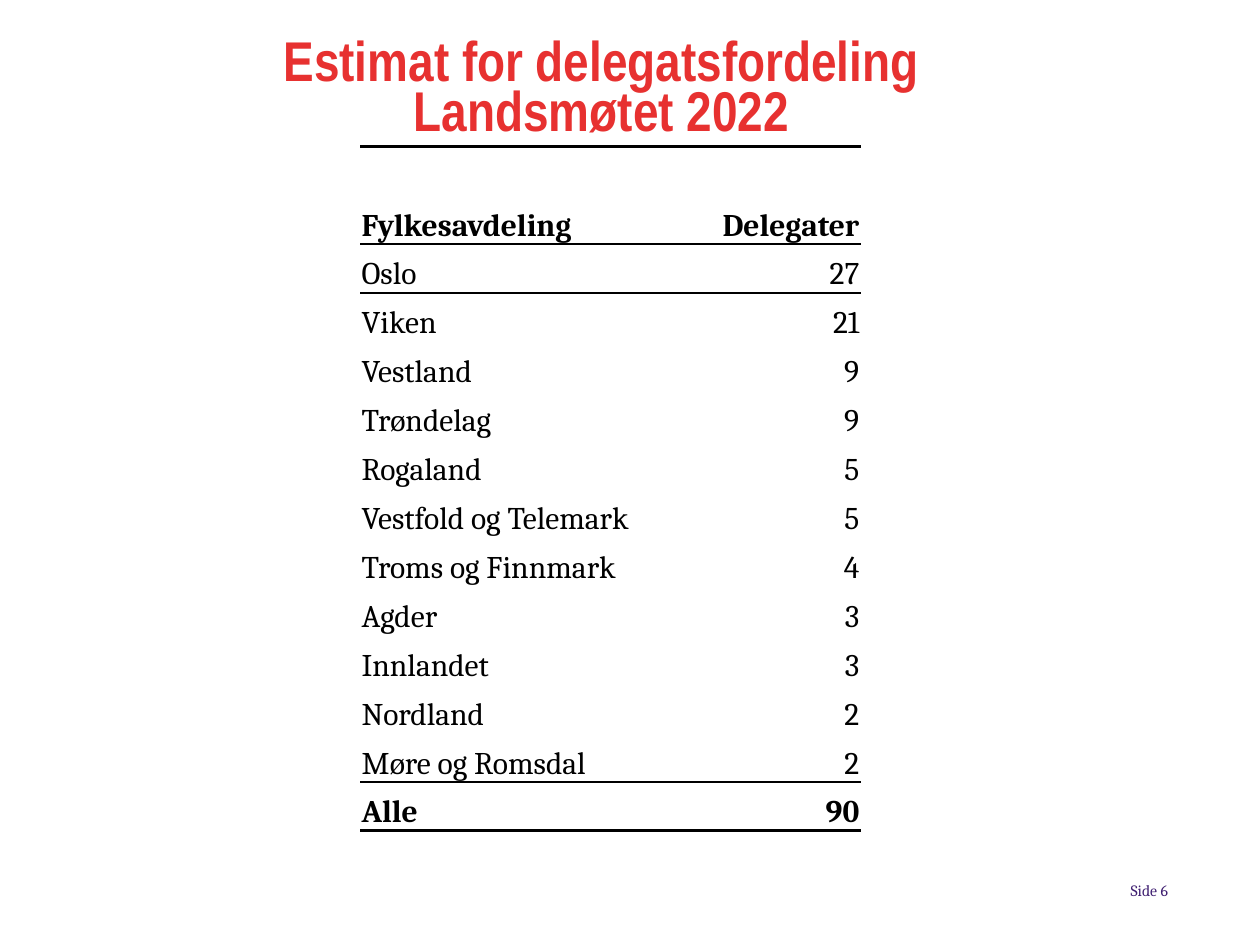
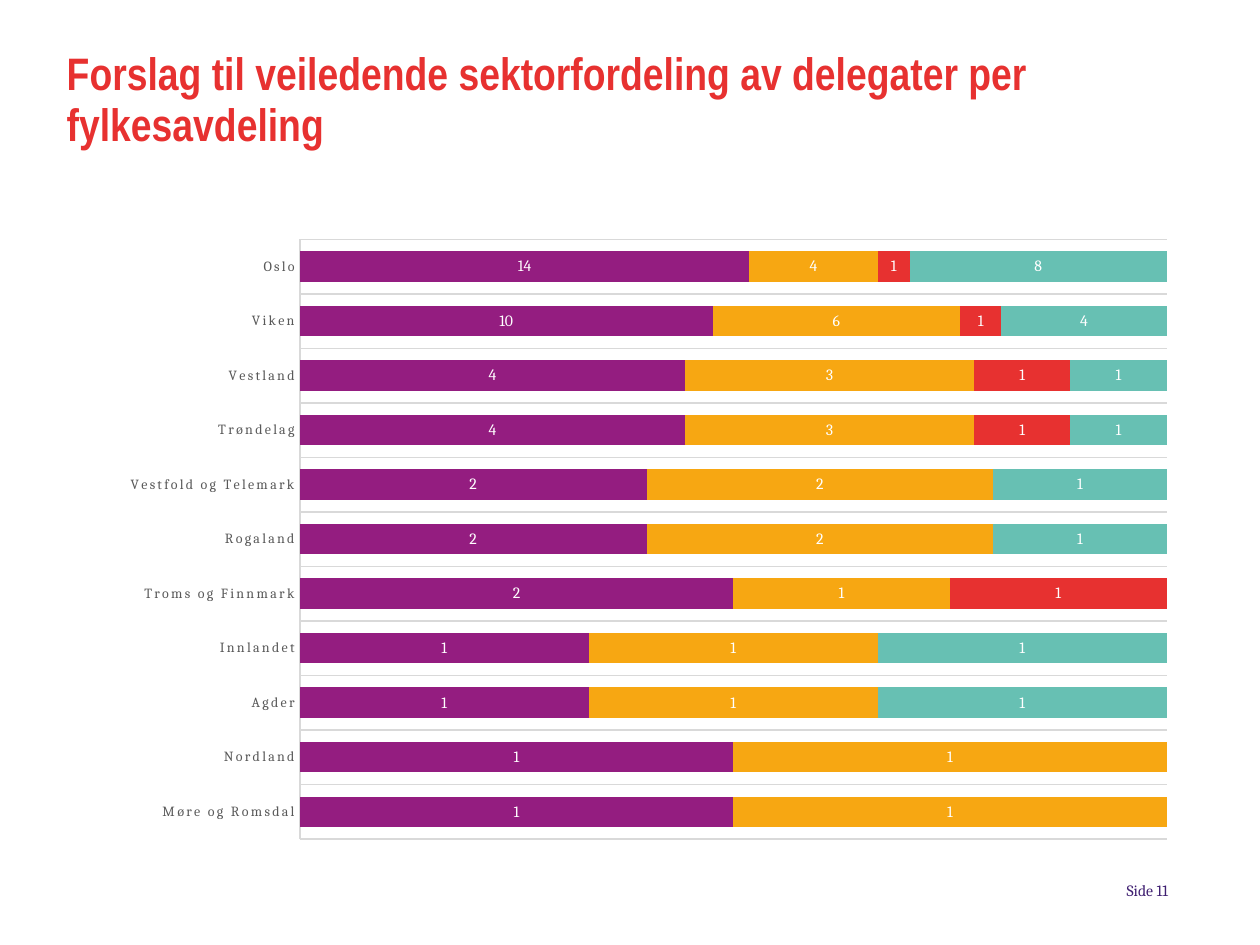
from dataclasses import dataclass
from lxml import etree
from pptx import Presentation, util as u
from pptx.chart import data as cd
from pptx.dml import color as col
from pptx.enum import chart as ch, text as tx
from pptx.oxml import ns, parse_xml

HEAD = ("Fylkesavdeling", "Delegater")
SEATS = [
    ("Oslo", 27), ("Viken", 21), ("Vestland", 9), ("Trøndelag", 9),
    ("Rogaland", 5), ("Vestfold og Telemark", 5), ("Troms og Finnmark", 4),
    ("Agder", 3), ("Innlandet", 3), ("Nordland", 2), ("Møre og Romsdal", 2),
]
TOTAL = ("Alle", 90)

SPLIT = [
    ("Møre og Romsdal", 1, 1, None, None),
    ("Nordland", 1, 1, None, None),
    ("Agder", 1, 1, None, 1),
    ("Innlandet", 1, 1, None, 1),
    ("Troms og Finnmark", 2, 1, 1, None),
    ("Rogaland", 2, 2, None, 1),
    ("Vestfold og Telemark", 2, 2, None, 1),
    ("Trøndelag", 4, 3, 1, 1),
    ("Vestland", 4, 3, 1, 1),
    ("Viken", 10, 6, 1, 4),
    ("Oslo", 14, 4, 1, 8),
]

PAGES = [
    dict(title="Estimat for delegatsfordeling Landsmøtet 2022",
         box=(1.54, 0.33, 6.47, 0.83), size=32, side=tx.PP_ALIGN.CENTER, foot="Side 6"),
    dict(title="Forslag til veiledende sektorfordeling av delegater per fylkesavdeling",
         box=(0.53, 0.39, 8.16, 0.81), size=26, side=tx.PP_ALIGN.LEFT, foot="Side 11"),
]
FOOT = (7.02, 6.99, 2.25, 0.15)
TABLE = (2.86, 1.16, 3.97, 5.44)
COLS = (2.5, 1.47)
CHART = (0.86, 1.33, 8.56, 5.45)
PLOT = (2.38, 1.9, 6.88, 4.76)


@dataclass(frozen=True)
class Theme:
    head: str = "Arial Narrow"
    body: str = "Cambria"
    red: str = "E73130"
    navy: str = "3F1F71"
    black: str = "000000"
    white: str = "FFFFFF"
    gray: str = "595959"
    rule: str = "D9D9D9"
    bars: tuple = ("941D80", "F7A712", "E73130", "67C0B3")
    cell: int = 18
    note: int = 9
    tick: int = 8
    lead: int = 29


T = Theme()


def put(obj, vals):
    for key, val in vals.items():
        setattr(obj, key, val)


def rgb(code):
    return col.RGBColor.from_string(code)


def inch(box):
    return [u.Inches(v) for v in box]


def style(font, name, size, code, bold=False):
    put(font, dict(name=name, size=u.Pt(size), bold=bold))
    font.color.rgb = rgb(code)


def paint(fill, code):
    fill.solid()
    fill.fore_color.rgb = rgb(code)


def label(slide, box, words, anchor, side, font, lead=None):
    frame = slide.shapes.add_textbox(*inch(box)).text_frame
    put(frame, dict(word_wrap=True, vertical_anchor=anchor, margin_left=0,
                    margin_right=0, margin_top=0, margin_bottom=0))
    para = frame.paragraphs[0]
    put(para, dict(text=words, alignment=side, line_spacing=lead))
    style(para.font, *font)


def page(deck, info):
    slide = deck.slides.add_slide(deck.slide_layouts[6])
    label(slide, info["box"], info["title"], tx.MSO_ANCHOR.TOP, info["side"],
          (T.head, info["size"], T.red, True), u.Pt(T.lead))
    label(slide, FOOT, info["foot"], tx.MSO_ANCHOR.MIDDLE, tx.PP_ALIGN.RIGHT,
          (T.body, T.note, T.navy))
    return slide


def edge(cell, tag, width):
    props = cell._tc.get_or_add_tcPr()
    line = etree.SubElement(props, ns.qn("a:" + tag), w=str(u.Pt(width)))
    if width:
        fill = etree.SubElement(line, ns.qn("a:solidFill"))
        etree.SubElement(fill, ns.qn("a:srgbClr"), val=T.black)
    else:
        etree.SubElement(line, ns.qn("a:noFill"))


def table(slide):
    rows = [HEAD, *SEATS, TOTAL]
    last = len(rows) - 1
    rules = {0: 2, 1: 1, 2: 1, last: 1, last + 1: 2}
    grid = slide.shapes.add_table(len(rows), len(COLS), *inch(TABLE)).table
    put(grid, dict(first_row=False, horz_banding=False))
    for part, wide in zip(grid.columns, COLS):
        part.width = u.Inches(wide)
    unit = TABLE[3] / (len(rows) + 1)
    sides = (tx.PP_ALIGN.LEFT, tx.PP_ALIGN.RIGHT)
    for r, row in enumerate(rows):
        grid.rows[r].height = u.Inches(unit * (1 if r else 2))
        for c, val in enumerate(row):
            cell = grid.cell(r, c)
            pad = u.Inches(0.01)
            put(cell, dict(margin_left=pad, margin_right=pad, margin_top=pad,
                           margin_bottom=0, vertical_anchor=tx.MSO_ANCHOR.BOTTOM))
            para = cell.text_frame.paragraphs[0]
            put(para, dict(text=str(val), alignment=sides[c]))
            style(para.font, T.body, T.cell, T.black, r in (0, last))
            for tag, width in (("lnL", 0), ("lnR", 0),
                               ("lnT", rules.get(r, 0)), ("lnB", rules.get(r + 1, 0))):
                edge(cell, tag, width)
            paint(cell.fill, T.white)


def place(chart):
    area = chart._chartSpace.chart.plotArea
    for old in area.findall(ns.qn("c:layout")):
        area.remove(old)
    left, top, wide, high = CHART
    x, y, w, h = PLOT
    spots = dict(x=(x - left) / wide, y=(y - top) / high, w=w / wide, h=h / high)
    modes = '<c:layoutTarget val="inner"/><c:xMode val="edge"/><c:yMode val="edge"/>'
    sizes = "".join(f'<c:{k} val="{v:.4f}"/>' for k, v in spots.items())
    area.insert(0, parse_xml(
        f'<c:layout {ns.nsdecls("c")}><c:manualLayout>{modes}{sizes}'
        '</c:manualLayout></c:layout>'))


def bars(slide):
    names, *parts = zip(*SPLIT)
    data = cd.CategoryChartData(number_format="0")
    data.categories = names
    for vals in parts:
        data.add_series("", vals)
    chart = slide.shapes.add_chart(
        ch.XL_CHART_TYPE.BAR_STACKED_100, *inch(CHART), data).chart
    put(chart, dict(has_legend=False, has_title=False))
    style(chart.font, T.body, 10, T.black)
    plot = chart.plots[0]
    put(plot, dict(gap_width=79, overlap=100, vary_by_categories=False))
    for part, code in zip(plot.series, T.bars):
        paint(part.format.fill, code)
        tags = part.data_labels
        put(tags, dict(show_value=True, position=ch.XL_LABEL_POSITION.CENTER))
        style(tags.font, T.body, T.note, T.white)
    put(chart.value_axis, dict(visible=False, has_major_gridlines=False))
    axis = chart.category_axis
    put(axis, dict(has_major_gridlines=True, major_tick_mark=ch.XL_TICK_MARK.NONE,
                   minor_tick_mark=ch.XL_TICK_MARK.NONE))
    for line in (axis.format.line, axis.major_gridlines.format.line):
        line.width = u.Pt(0.75)
        line.color.rgb = rgb(T.rule)
    style(axis.tick_labels.font, T.body, T.tick, T.gray)
    for props in axis._element.iter(ns.qn("a:defRPr")):
        props.set("spc", "120")
    place(chart)


def main():
    deck = Presentation()
    put(deck, dict(slide_width=u.Inches(10), slide_height=u.Inches(7.5)))
    for info, draw in zip(PAGES, (table, bars)):
        draw(page(deck, info))
    deck.save("out.pptx")


if __name__ == "__main__":
    main()
